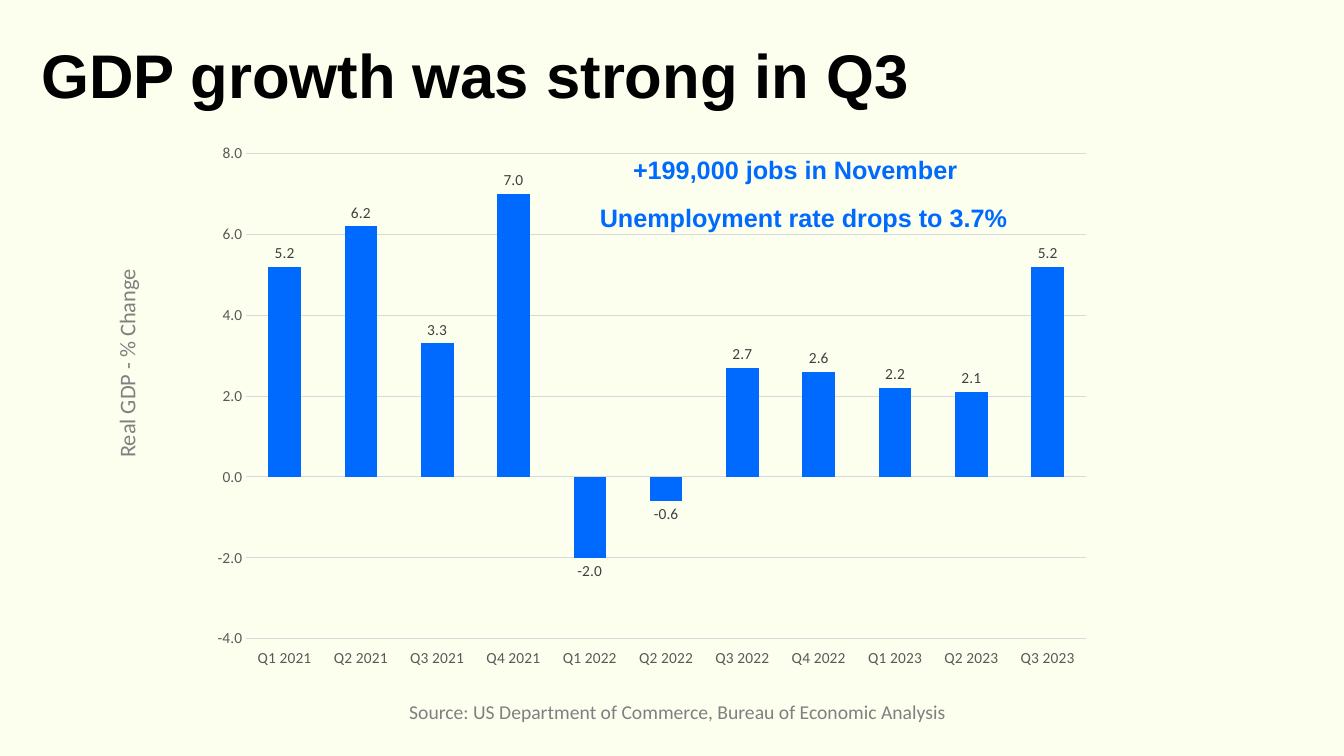
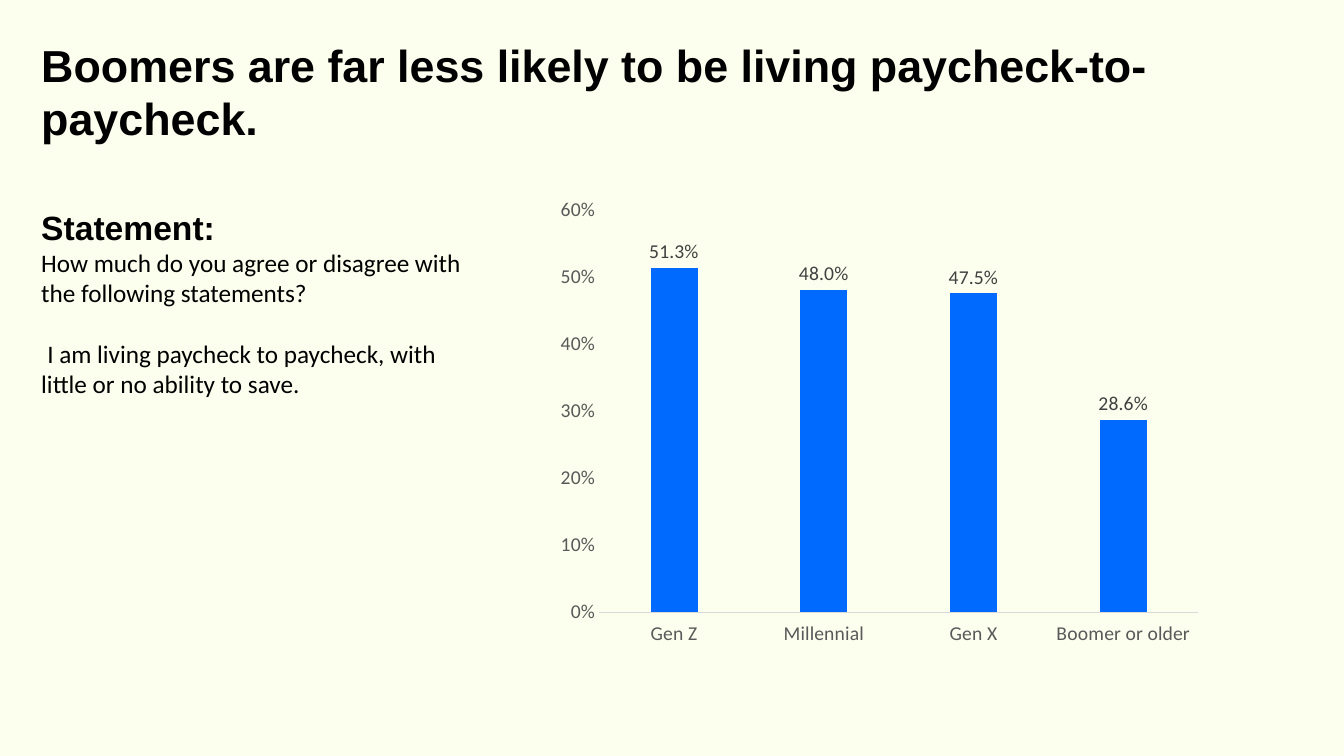
from lxml import etree
from pptx import Presentation
from pptx import util as u
from pptx.chart.data import CategoryChartData
from pptx.dml.color import RGBColor
from pptx.enum import chart as ch
from pptx.oxml.ns import qn

COLORS = {"page": "FCFFEE", "ink": "000000", "accent": "006AFF", "muted": "808080",
          "axis": "595959", "label": "404040", "rule": "D9D9D9"}
COLORS = {name: RGBColor.from_string(value) for name, value in COLORS.items()}
HEAD, BODY = "Arial", "Calibri"

prs = Presentation()
prs.slide_width, prs.slide_height = u.Inches(13.33), u.Inches(7.5)
page_fill = prs.slide_master.background.fill
page_fill.solid()
page_fill.fore_color.rgb = COLORS["page"]


def area(left, top, width, height):
    """Turn percentages of the slide into lengths."""
    return [int(share * full / 100) for share, full in
            zip((left, top, width, height), (prs.slide_width, prs.slide_height) * 2)]


def add_text(slide, place, paragraphs):
    """Add a text box; each paragraph is (text, size, font, colour)."""
    box = slide.shapes.add_textbox(*area(*place))
    frame = box.text_frame
    frame.word_wrap = True
    frame.text = "\n".join(line[0] for line in paragraphs)
    for paragraph, (_, size, font, color) in zip(frame.paragraphs, paragraphs):
        for run in paragraph.runs:
            run.font.size, run.font.name = u.Pt(size), font
            run.font.bold = font == HEAD
            run.font.color.rgb = COLORS[color]
    return box


MARGIN, TITLE_TOP = 2.33, 4.27
pages = [
    {"title": "GDP growth was strong in Q3", "title_size": 44, "title_area": (95.7, 11.2),
     "chart_area": (14.85, 17.6, 67.29, 72.13), "size": 11, "gap": 134,
     "axis": (-4, 8, 2, "0.0"), "label_format": "0.0", "grid": True,
     "cats": [f"Q{quarter} {year}" for year in (2021, 2022, 2023)
              for quarter in (1, 2, 3, 4)][:11],
     "values": [5.2, 6.2, 3.3, 7, -2, -0.6, 2.7, 2.6, 2.2, 2.1, 5.2]},
    {"title": "Boomers are far less likely to be living paycheck-to-paycheck.",
     "title_size": 32, "title_area": (89.8, 15.73),
     "chart_area": (39.31, 24.8, 50.71, 62), "size": 14, "gap": 219,
     "axis": (0, 0.6, 0.1, "0%"), "label_format": "0.0%", "grid": False,
     "plot": {"x": 0.104, "y": 0.047, "w": 0.879, "h": 0.859},
     "cats": ["Gen Z", "Millennial", "Gen X", "Boomer or older"],
     "values": [0.513, 0.48, 0.475, 0.286]},
]

# Title and column chart on each slide
slides = []
for page in pages:
    slide = prs.slides.add_slide(prs.slide_layouts[6])
    slides.append(slide)
    add_text(slide, (MARGIN, TITLE_TOP, *page["title_area"]),
             [(page["title"], page["title_size"], HEAD, "ink")])

    data = CategoryChartData()
    data.categories = page["cats"]
    data.add_series("Series 1", page["values"])
    chart = slide.shapes.add_chart(ch.XL_CHART_TYPE.COLUMN_CLUSTERED,
                                   *area(*page["chart_area"]), data).chart
    chart.has_legend = chart.has_title = False
    chart.font.name, chart.font.size = BODY, u.Pt(page["size"])

    # Columns and their labels
    plot = chart.plots[0]
    plot.gap_width, plot.overlap, plot.vary_by_categories = page["gap"], -27, False
    columns = plot.series[0]
    columns.invert_if_negative = False
    columns.format.fill.solid()
    columns.format.fill.fore_color.rgb = COLORS["accent"]
    plot.has_data_labels = True
    labels = plot.data_labels
    labels.show_value = True
    labels.number_format, labels.number_format_is_linked = page["label_format"], False
    labels.position = ch.XL_LABEL_POSITION.OUTSIDE_END
    labels.font.size, labels.font.name = u.Pt(page["size"]), BODY
    labels.font.color.rgb = COLORS["label"]

    # Axes
    cat_axis, val_axis = chart.category_axis, chart.value_axis
    for axis in (cat_axis, val_axis):
        axis.major_tick_mark = axis.minor_tick_mark = ch.XL_TICK_MARK.NONE
        axis.tick_labels.font.size = u.Pt(page["size"])
        axis.tick_labels.font.name = BODY
        axis.tick_labels.font.color.rgb = COLORS["axis"]
    cat_axis.tick_label_position = ch.XL_TICK_LABEL_POSITION.LOW
    val_axis.minimum_scale, val_axis.maximum_scale, val_axis.major_unit, ticks = page["axis"]
    val_axis.tick_labels.number_format = ticks
    val_axis.tick_labels.number_format_is_linked = False
    val_axis.format.line.fill.background()
    val_axis.has_major_gridlines = page["grid"]
    rules = [cat_axis.format.line]
    if page["grid"]:
        rules.append(val_axis.major_gridlines.format.line)
    for rule in rules:
        rule.color.rgb, rule.width = COLORS["rule"], u.Pt(0.75)

    # Fixed inner plot area
    if "plot" in page:
        plot_area = plot._element.getparent()
        for old in plot_area.findall(qn("c:layout")):
            plot_area.remove(old)
        layout = etree.Element(qn("c:layout"))
        plot_area.insert(0, layout)
        manual = etree.SubElement(layout, qn("c:manualLayout"))
        settings = {"layoutTarget": "inner", "xMode": "edge", "yMode": "edge", **page["plot"]}
        for tag, value in settings.items():
            etree.SubElement(manual, qn(f"c:{tag}")).set("val", str(value))

gdp, paycheck = slides

# GDP: callouts, axis title and source
add_text(gdp, (46.36, 19.73, 30.46, 5.33),
         [("+199,000 jobs in November", 18, HEAD, "accent")])
add_text(gdp, (43.89, 26.13, 38.26, 5.33),
         [("Unemployment rate drops to 3.7%", 18, HEAD, "accent")])
axis_title = add_text(gdp, (0.08, 42.8, 18.68, 4.93),
                      [("Real GDP - % Change", 16, BODY, "muted")])
axis_title.rotation = 270
add_text(gdp, (29.71, 91.87, 47.64, 4.53),
         [("Source: US Department of Commerce, Bureau of Economic Analysis", 14, BODY, "muted")])

# Paycheck: survey statement
statement = add_text(paycheck, (MARGIN, 26.67, 33.68, 26.93), [
    ("Statement:", 24, HEAD, "ink"),
    ("How much do you agree or disagree with the following statements?", 18, BODY, "ink"),
    ("I am living paycheck to paycheck, with little or no ability to save.", 18, BODY, "ink")])
answer = statement.text_frame.paragraphs[-1]
answer.space_before = u.Pt(22)
answer._p.get_or_add_pPr().set("indent", str(u.Inches(0.06)))

prs.save("out.pptx")
